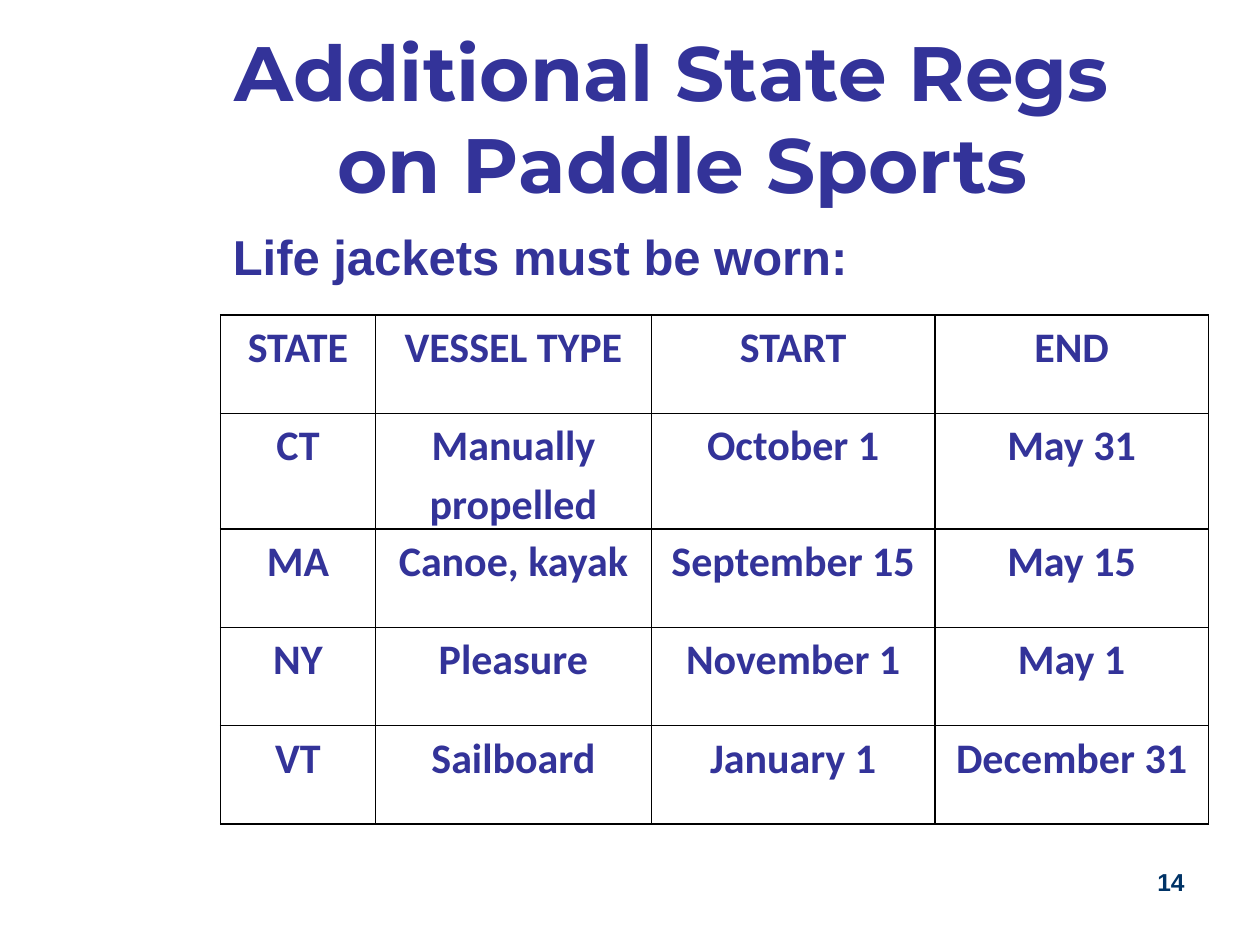
from dataclasses import dataclass

import pptx
import pptx.dml.color
import pptx.enum.text
import pptx.oxml.ns
import pptx.util
from lxml import etree

ALIGN = pptx.enum.text.PP_ALIGN
ANCHOR = pptx.enum.text.MSO_ANCHOR
Inches = pptx.util.Inches
Pt = pptx.util.Pt


@dataclass(frozen=True)
class Theme:
    background: str = "FFFFFF"
    text: str = "333399"
    page_number: str = "003366"
    border: str = "000000"
    title_font: str = "Montserrat"
    body_font: str = "Arial"
    table_font: str = "Calibri"
    title_size: int = 44
    body_size: int = 28
    table_size: int = 24
    number_size: int = 14
    border_width: int = 1


THEME = Theme()
SLIDE_SIZE = (10, 7.5)
COLUMN_WIDTHS = (1.23, 2.19, 2.25, 2.17)
ROW_HEIGHT = 0.78
REGULATIONS = (
    ("STATE", "VESSEL TYPE", "START", "END"),
    ("CT", "Manually propelled", "October 1", "May 31"),
    ("MA", "Canoe, kayak", "September 15", "May 15"),
    ("NY", "Pleasure", "November 1", "May 1"),
    ("VT", "Sailboard", "January 1", "December 31"),
)


def style_paragraph(paragraph, font_name, size, color, alignment):
    paragraph.alignment = alignment
    for run in paragraph.runs:
        run.font.name = font_name
        run.font.size = Pt(size)
        run.font.bold = True
        run.font.color.rgb = pptx.dml.color.RGBColor.from_string(color)


def add_text(slide, box, text, font_name, size, color, alignment, anchor=ANCHOR.TOP):
    shape = slide.shapes.add_textbox(*map(Inches, box))
    frame = shape.text_frame
    frame.word_wrap = True
    frame.vertical_anchor = anchor
    frame.text = text
    style_paragraph(frame.paragraphs[0], font_name, size, color, alignment)


def add_title(slide, box):
    add_text(slide, box, "Additional State Regs \von Paddle Sports", THEME.title_font,
             THEME.title_size, THEME.text, ALIGN.CENTER, ANCHOR.MIDDLE)


def add_lead_in(slide, box):
    add_text(slide, box, "Life jackets must be worn:", THEME.body_font,
             THEME.body_size, THEME.text, ALIGN.LEFT)


def add_page_number(slide, box):
    add_text(slide, box, "14", THEME.body_font, THEME.number_size,
             THEME.page_number, ALIGN.RIGHT)


def set_borders(cell):
    """Put the border lines ahead of the fill, as the schema requires."""
    properties = cell._tc.get_or_add_tcPr()
    qn = pptx.oxml.ns.qn
    for position, side in enumerate(("lnL", "lnR", "lnT", "lnB")):
        line = etree.Element(qn(f"a:{side}"), w=str(Pt(THEME.border_width)))
        fill = etree.SubElement(line, qn("a:solidFill"))
        etree.SubElement(fill, qn("a:srgbClr"), val=THEME.border)
        properties.insert(position, line)


def fill_cell(cell, text):
    cell.fill.background()
    set_borders(cell)
    cell.margin_left = cell.margin_right = Inches(0.07)
    cell.margin_top = cell.margin_bottom = 0
    cell.text = text
    paragraph = cell.text_frame.paragraphs[0]
    paragraph.line_spacing = 1.15
    style_paragraph(paragraph, THEME.table_font, THEME.table_size, THEME.text, ALIGN.CENTER)


def add_regulations_table(slide, box):
    frame = slide.shapes.add_table(len(REGULATIONS), len(COLUMN_WIDTHS), *map(Inches, box))
    table = frame.table
    table.first_row = table.horz_banding = False
    for column, width in zip(table.columns, COLUMN_WIDTHS):
        column.width = Inches(width)
    for row, texts in zip(table.rows, REGULATIONS):
        row.height = Inches(ROW_HEIGHT)
        for cell, text in zip(row.cells, texts):
            fill_cell(cell, text)


def main():
    presentation = pptx.Presentation()
    presentation.slide_width, presentation.slide_height = map(Inches, SLIDE_SIZE)
    slide = presentation.slides.add_slide(presentation.slide_layouts[6])
    background = slide.background.fill
    background.solid()
    background.fore_color.rgb = pptx.dml.color.RGBColor.from_string(THEME.background)

    add_title(slide, (0.92, 0.3, 9, 1.25))
    add_lead_in(slide, (1.75, 1.75, 7.75, 4.95))
    add_page_number(slide, (7.17, 6.83, 2.33, 0.52))
    table_size = (sum(COLUMN_WIDTHS), ROW_HEIGHT * len(REGULATIONS))
    add_regulations_table(slide, (1.75, 2.5, *table_size))
    presentation.save("out.pptx")


if __name__ == "__main__":
    main()
